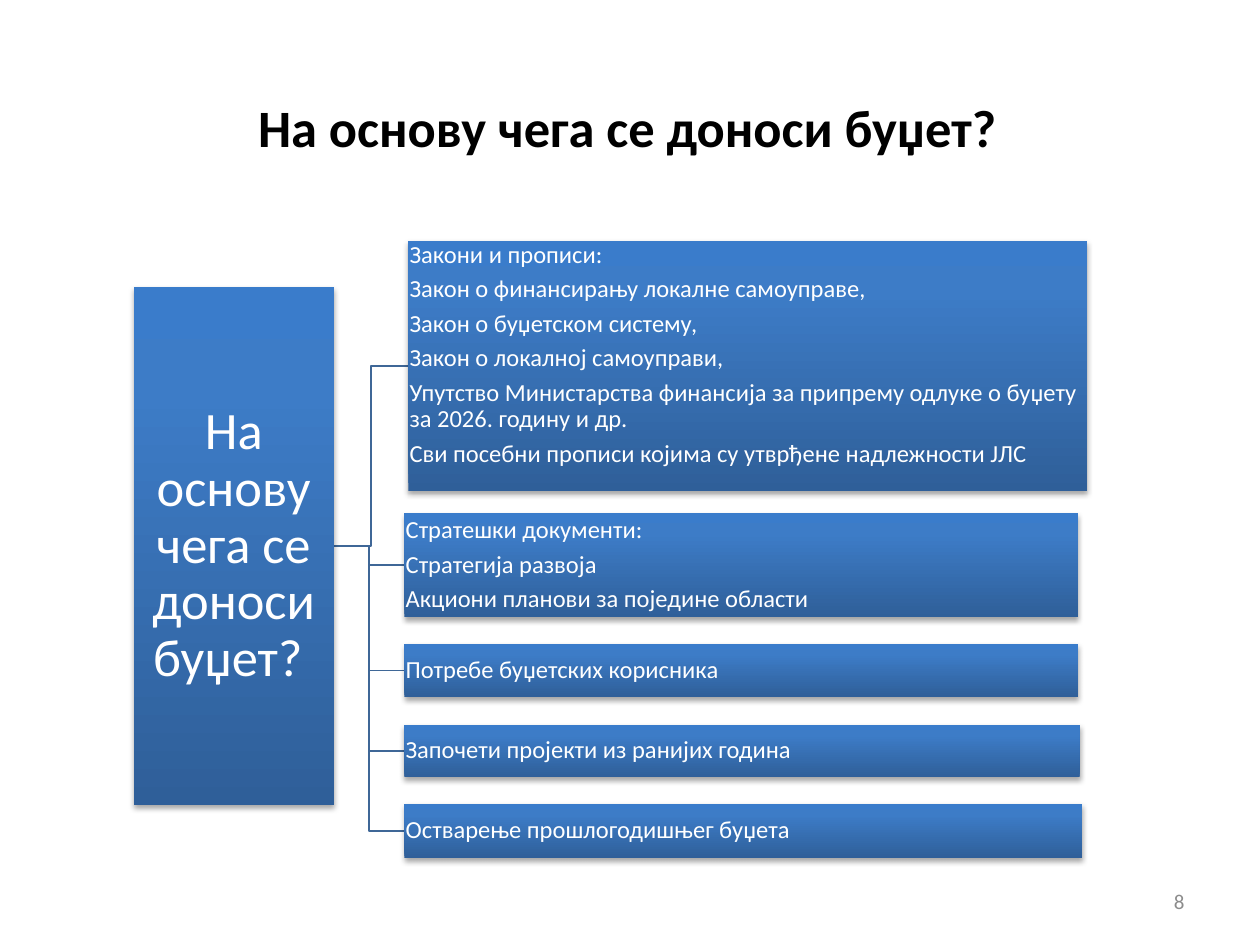
from copy import deepcopy
from dataclasses import dataclass
from lxml.etree import SubElement as Sub
from pptx import Presentation
from pptx.dml.color import RGBColor as RGB
from pptx.enum.shapes import MSO_CONNECTOR as CONN, MSO_SHAPE as SHAPE
from pptx.enum.text import MSO_ANCHOR as ANCHOR, PP_ALIGN as ALIGN
from pptx.oxml.ns import qn
from pptx.util import Inches, Pt


@dataclass(frozen=True)
class Theme:
    font: str = "Calibri"
    black: str = "000000"
    white: str = "FFFFFF"
    gray: str = "8C8C8C"
    line: str = "3F6797"
    stops: tuple = ((0, "2F5F99"), (0.8, "3D7CC7"), (1, "3A7CCB"))
    big: int = 30
    body: int = 14
    small: int = 12


THEME = Theme()
TITLE = "На основу чега се доноси буџет?"
ROOT = (1.06, 2.28, 1.59, 4.11)

# Each basis: box, anchor, lines
BASES = [
    ((3.24, 1.91, 5.39, 1.99), ANCHOR.TOP, [
        "Закони и прописи:",
        "Закон о финансирању локалне самоуправе,",
        "Закон о буџетском систему,",
        "Закон о локалној самоуправи,",
        "Упутство Министарства финансија за припрему одлуке о буџету за 2026. годину и др.",
        "Сви посебни прописи којима су утврђене надлежности ЈЛС"]),
    ((3.21, 4.07, 5.35, 0.83), ANCHOR.MIDDLE, [
        "Стратешки документи:",
        "Стратегија развоја",
        "Акциони планови за поједине области"]),
    ((3.21, 5.11, 5.35, 0.42), ANCHOR.MIDDLE, ["Потребе буџетских корисника"]),
    ((3.21, 5.75, 5.36, 0.42), ANCHOR.MIDDLE, ["Започети пројекти из ранијих година"]),
    ((3.21, 6.38, 5.38, 0.43), ANCHOR.MIDDLE, ["Остварење прошлогодишњег буџета"]),
]


def write(shape, lines, size, color, align=ALIGN.LEFT, anchor=ANCHOR.MIDDLE,
          inset=None, bold=False, space=None, after=0):
    frame = shape.text_frame
    frame.word_wrap = True
    frame.vertical_anchor = anchor
    if inset is not None:
        frame.margin_left = frame.margin_right = Inches(inset)
        frame.margin_top = frame.margin_bottom = Inches(inset)
    frame.text = "\n".join(lines)
    for para in frame.paragraphs:
        para.alignment = align
        para.line_spacing = space
        para.space_after = Pt(after)
        font = para.font
        font.name, font.size, font.bold = THEME.font, Pt(size), bold
        font.color.rgb = RGB.from_string(color)


def add_label(slide, box, text, size, color, align, bold=False):
    label = slide.shapes.add_textbox(*map(Inches, box))
    write(label, [text], size, color, align, bold=bold)


def add_shadow(shape):
    shape.shadow.inherit = False
    effects = shape.element.spPr.find(qn("a:effectLst"))
    outer = Sub(effects, qn("a:outerShdw"), blurRad=str(Pt(3.1)),
                dist=str(Pt(1.8)), dir="5400000", rotWithShape="0")
    color = Sub(outer, qn("a:srgbClr"), val=THEME.black)
    Sub(color, qn("a:alpha"), val="35000")


def add_panel(slide, box):
    panel = slide.shapes.add_shape(SHAPE.RECTANGLE, *map(Inches, box))
    fill = panel.fill
    fill.gradient()
    fill.gradient_angle = 90
    # The default gradient has two stops; a third is needed
    stops = panel.element.spPr.find(".//" + qn("a:gsLst"))
    stops.append(deepcopy(stops[-1]))
    for stop, (place, color) in zip(fill.gradient_stops, THEME.stops):
        stop.position = place
        stop.color.rgb = RGB.from_string(color)
    panel.line.fill.background()
    add_shadow(panel)
    return panel


def add_link(slide, start, end):
    link = slide.shapes.add_connector(CONN.ELBOW, *map(Inches, start + end))
    link.line.color.rgb = RGB.from_string(THEME.line)
    link.line.width = Pt(0.75)
    Sub(link.element.spPr, qn("a:effectLst"))


def mid_y(box):
    return box[1] + box[3] / 2


def main():
    deck = Presentation()
    deck.slide_width, deck.slide_height = Inches(10), Inches(7.5)
    slide = deck.slides.add_slide(deck.slide_layouts[6])

    # Title and page number
    add_label(slide, (0.48, 0.54, 9, 0.93), TITLE, THEME.big, THEME.black,
              ALIGN.CENTER, bold=True)
    add_label(slide, (7.17, 6.95, 2.33, 0.4), "8", THEME.small, THEME.gray,
              ALIGN.RIGHT)

    # Links from the root to each basis
    start = (ROOT[0] + ROOT[2], mid_y(ROOT))
    for box, _, _ in reversed(BASES):
        add_link(slide, start, (box[0], mid_y(box)))

    # Root question
    write(add_panel(slide, ROOT), [TITLE + " "], THEME.big, THEME.white,
          ALIGN.CENTER, inset=0.02, space=0.9)

    # Bases of the budget
    for box, anchor, lines in BASES:
        write(add_panel(slide, box), lines, THEME.body, THEME.white,
              anchor=anchor, inset=0.01, space=0.9, after=4.6)

    deck.save("out.pptx")


if __name__ == "__main__":
    main()
